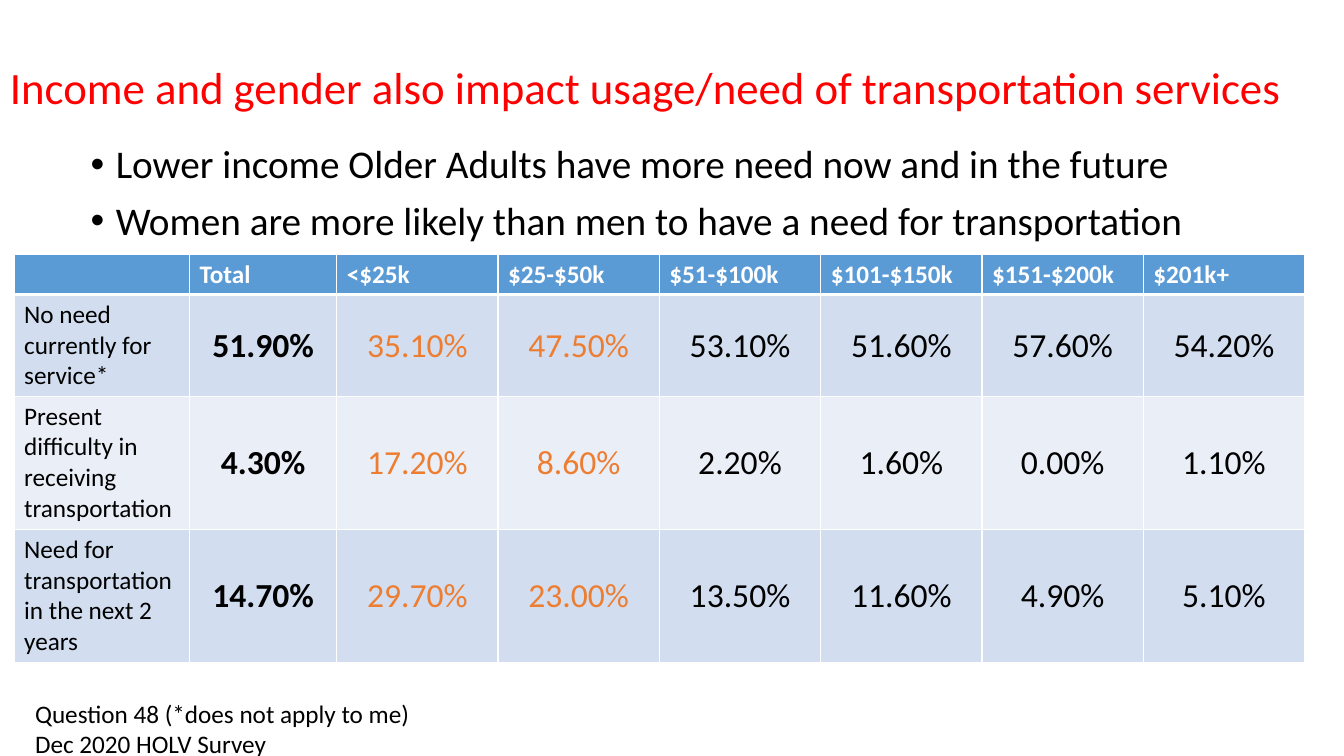
from lxml import etree
from pptx import Presentation
from pptx.dml.color import RGBColor
from pptx.enum.text import MSO_ANCHOR, PP_ALIGN
from pptx.oxml.ns import qn
from pptx.util import Emu, Pt

PX = 9144  # 100 px to the inch
FONT = "Calibri"
MIDDLE, CENTER = MSO_ANCHOR.MIDDLE, PP_ALIGN.CENTER

BLACK = RGBColor(0x00, 0x00, 0x00)
WHITE = RGBColor(0xFF, 0xFF, 0xFF)
RED = RGBColor(0xFF, 0x00, 0x00)
ORANGE = RGBColor(0xED, 0x7D, 0x31)
HEADER_BLUE = RGBColor(0x5B, 0x9B, 0xD5)
BANDS = [RGBColor(0xD2, 0xDE, 0xEF), RGBColor(0xEA, 0xEF, 0xF7)]

TITLE = "Income and gender also impact usage/need of transportation services"
FINDINGS = [
    "Lower income Older Adults have more need now and in the future",
    "Women are more likely than men to have a need for transportation",
]
FOOTNOTES = ["Question 48 (*does not apply to me)", "Dec 2020 HOLV Survey"]
HEADERS = ["", "Total", "<$25k", "$25-$50k", "$51-$100k", "$101-$150k",
           "$151-$200k", "$201k+"]
NEEDS = [
    ("No need currently for service*",
     ["51.90%", "35.10%", "47.50%", "53.10%", "51.60%", "57.60%", "54.20%"]),
    ("Present difficulty in receiving transportation",
     ["4.30%", "17.20%", "8.60%", "2.20%", "1.60%", "0.00%", "1.10%"]),
    ("Need for transportation in the next 2 years",
     ["14.70%", "29.70%", "23.00%", "13.50%", "11.60%", "4.90%", "5.10%"]),
]
TOTAL_COLUMN = 1
LOW_INCOME_COLUMNS = (2, 3)
COLUMN_WIDTHS = [174, 146] + [160] * 6
ROW_HEIGHTS = [40, 101, 132, 132]


def px(length):
    return Emu(length * PX)


def set_font(paragraph, size, color, bold=False):
    font = paragraph.font
    font.name, font.size, font.bold = FONT, Pt(size), bold
    font.color.rgb = color


def add_text(slide, box, lines, size, color):
    frame = slide.shapes.add_textbox(*map(px, box)).text_frame
    frame.word_wrap = True
    frame.text = "\n".join(lines)
    for paragraph in frame.paragraphs:
        set_font(paragraph, size, color)
    return frame


def add_title(slide, box):
    frame = add_text(slide, box, [TITLE], 32, RED)
    frame.vertical_anchor = MIDDLE
    frame.paragraphs[0].line_spacing = 0.9


def add_findings(slide, box):
    frame = add_text(slide, box, FINDINGS, 28, BLACK)
    for paragraph in frame.paragraphs:
        paragraph.line_spacing = 0.9
        paragraph.space_before = Pt(10)
        properties = paragraph._p.get_or_add_pPr()
        properties.set("marL", str(px(25)))
        properties.set("indent", str(-px(25)))
        bullet_font = etree.Element(qn("a:buFont"), typeface="Arial")
        bullet = etree.Element(qn("a:buChar"), char="•")
        defaults = properties.find(qn("a:defRPr"))
        defaults.addprevious(bullet_font)
        defaults.addprevious(bullet)


def add_borders(cell, top, bottom):
    """Draw white cell borders, with top and bottom widths in points."""
    properties = cell._tc.get_or_add_tcPr()
    for side, width in (("L", 1), ("R", 1), ("T", top), ("B", bottom)):
        line = etree.SubElement(properties, qn(f"a:ln{side}"), w=str(Pt(width)))
        fill = etree.SubElement(line, qn("a:solidFill"))
        etree.SubElement(fill, qn("a:srgbClr"), val=str(WHITE))


def fill_cell(cell, text, background, size, color, bold):
    cell.fill.solid()
    cell.fill.fore_color.rgb = background
    cell.text = text
    set_font(cell.text_frame.paragraphs[0], size, color, bold)


def center_value(cell):
    cell.vertical_anchor = MIDDLE
    cell.margin_left = cell.margin_right = cell.margin_top = px(1)
    cell.margin_bottom = 0
    cell.text_frame.paragraphs[0].alignment = CENTER


def add_needs_table(slide, left, top):
    box = (left, top, sum(COLUMN_WIDTHS), sum(ROW_HEIGHTS))
    table = slide.shapes.add_table(
        len(ROW_HEIGHTS), len(COLUMN_WIDTHS), *map(px, box)).table
    for column, width in zip(table.columns, COLUMN_WIDTHS):
        column.width = px(width)
    for row, height in zip(table.rows, ROW_HEIGHTS):
        row.height = px(height)

    for c, header in enumerate(HEADERS):
        cell = table.cell(0, c)
        add_borders(cell, 1, 3)
        fill_cell(cell, header, HEADER_BLUE, 18, WHITE, True)

    for r, (need, shares) in enumerate(NEEDS, start=1):
        band = BANDS[(r - 1) % 2]
        for c, text in enumerate([need] + shares):
            cell = table.cell(r, c)
            add_borders(cell, 3 if r == 1 else 1, 1)
            color = ORANGE if c in LOW_INCOME_COLUMNS else BLACK
            fill_cell(cell, text, band, 24 if c else 18, color,
                      c == TOTAL_COLUMN)
            if c:
                center_value(cell)


def add_footnotes(slide, box):
    add_text(slide, box, FOOTNOTES, 18, BLACK)


def main():
    deck = Presentation()
    deck.slide_width, deck.slide_height = px(1333), px(750)
    slide = deck.slides.add_slide(deck.slide_layouts[6])
    add_title(slide, (0, 17, 1297, 145))
    add_findings(slide, (80, 139, 1150, 476))
    add_needs_table(slide, 14, 252)
    add_footnotes(slide, (25, 688, 443, 71))
    deck.save("out.pptx")


if __name__ == "__main__":
    main()
